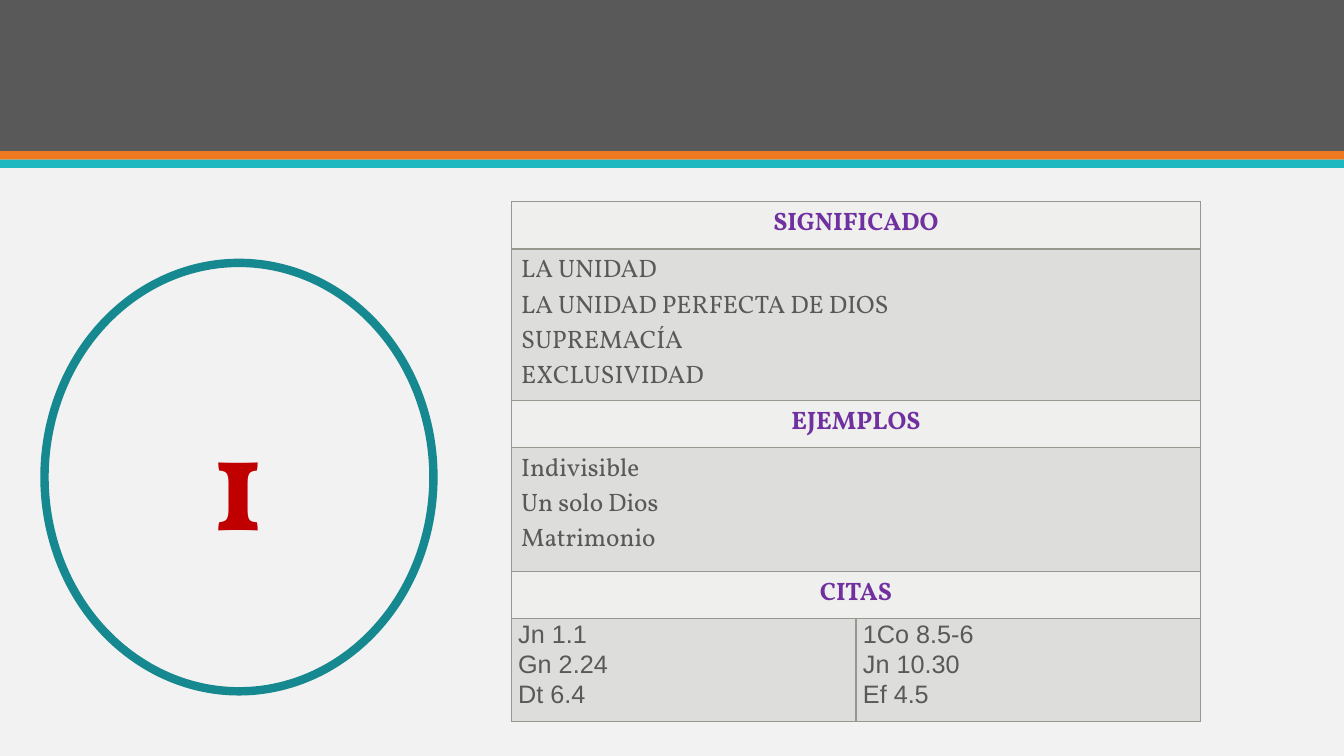
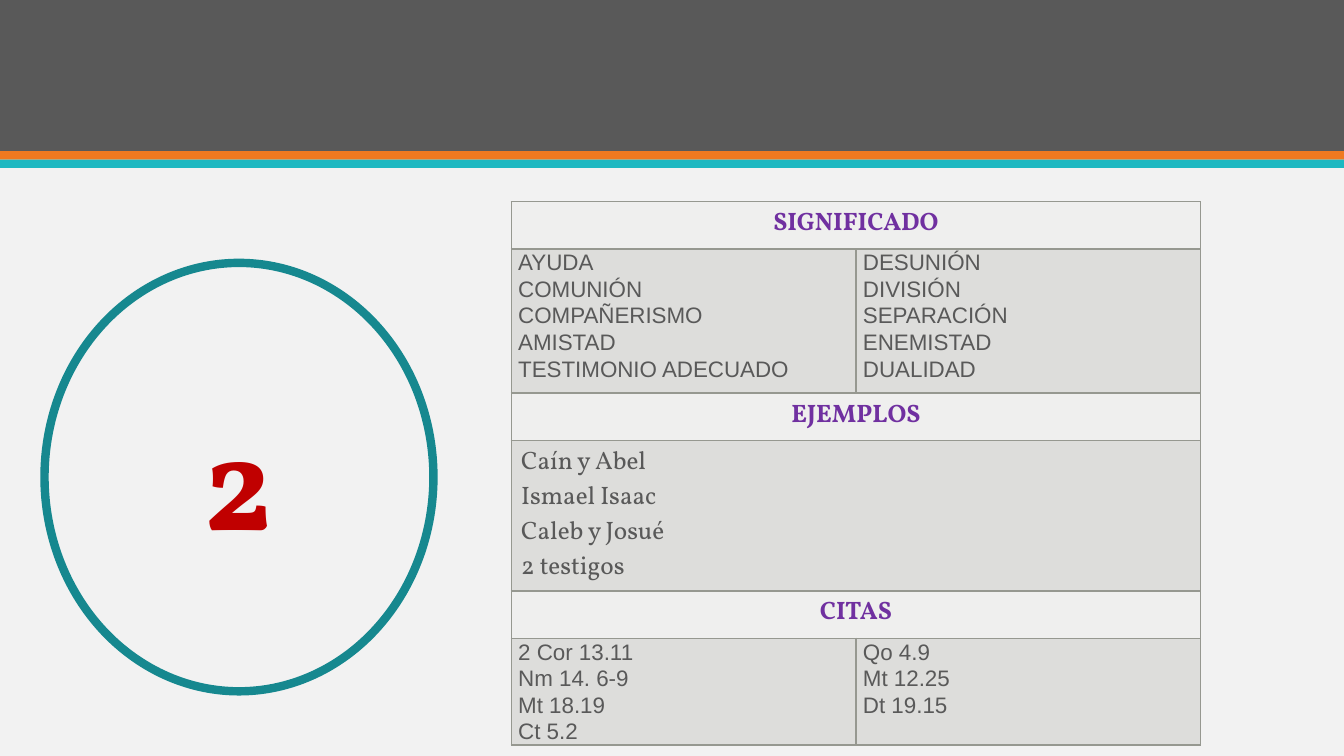
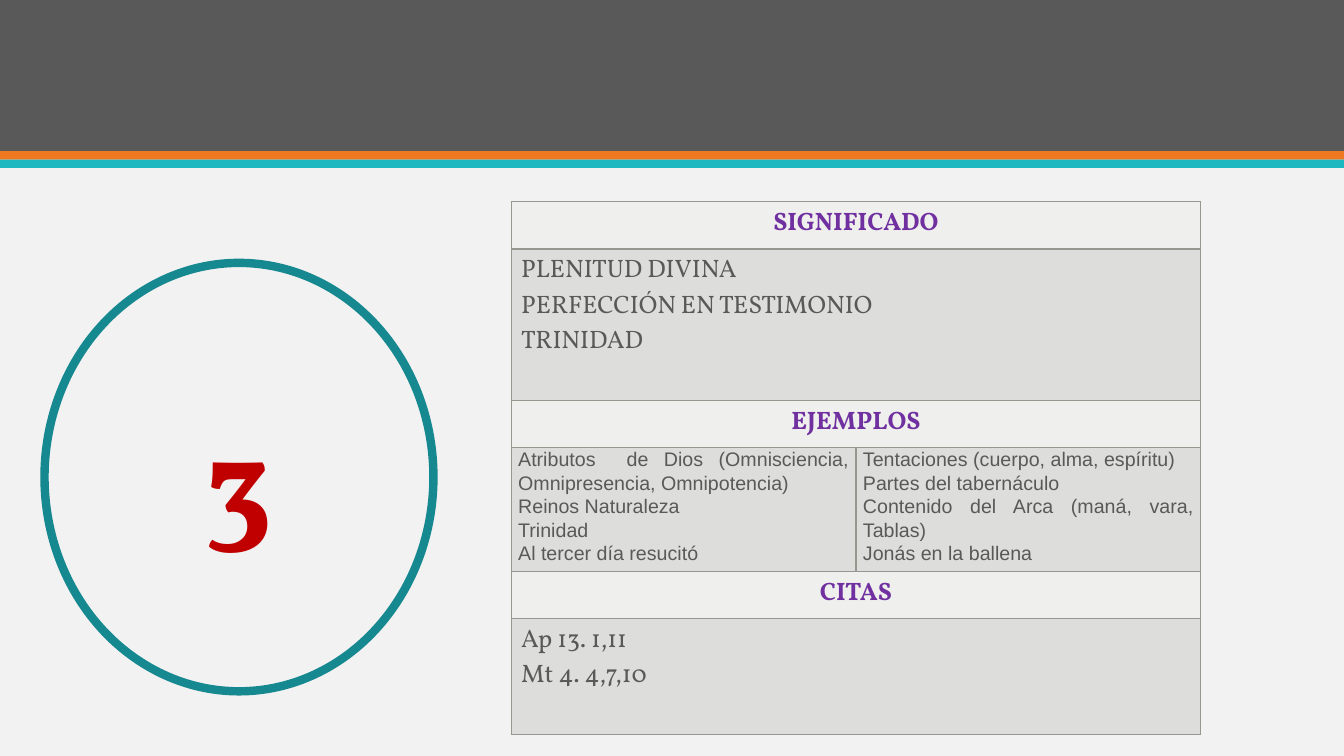
from dataclasses import dataclass

from lxml import etree
from pptx import Presentation
from pptx import util as u
from pptx.dml import color
from pptx.enum import shapes, text
from pptx.oxml import ns

WIDTH, HEIGHT = 13.33, 7.5
GRID_COLUMNS, GRID_ROWS = 160, 90

SERIF, SANS = "Vollkorn", "Arial"
PAPER, GREY, ORANGE, AQUA = "F2F2F2", "595959", "EF7920", "1EB8C1"
TEAL, RED, PURPLE = "16888F", "C00000", "7030A0"
HEADING_FILL, BODY_FILL, BORDER = "EFEFEE", "DDDDDB", "969890"

HEADING_ROWS = 5.64


@dataclass(frozen=True)
class Area:
    """A rectangle in grid columns and rows."""
    left: float
    top: float
    width: float
    height: float

    def place(self):
        return (across(self.left), down(self.top),
                across(self.width), down(self.height))


@dataclass(frozen=True)
class Band:
    area: Area
    fill: str


@dataclass(frozen=True)
class Section:
    """A heading over one full-width list or two side-by-side lists."""
    title: str
    lists: tuple[tuple[str, ...], ...]
    rows: float
    size: int = 18


@dataclass(frozen=True)
class NumberPage:
    number: str
    sections: tuple[Section, ...]


BANDS = (
    Band(Area(0, 0, GRID_COLUMNS, 18), GREY),
    Band(Area(0, 18, GRID_COLUMNS, 1), ORANGE),
    Band(Area(0, 19, GRID_COLUMNS, 1), AQUA),
)
CIRCLE = Area(5.3, 31.3, 46.3, 51)
TABLE_LEFT, TABLE_TOP, TABLE_WIDTH = 60.85, 24, 82.1

PAGES = (
    NumberPage("1", (
        Section("SIGNIFICADO", (("LA UNIDAD", "LA UNIDAD PERFECTA DE DIOS",
                                 "SUPREMACÍA", "EXCLUSIVIDAD"),), 18),
        Section("EJEMPLOS", (("Indivisible", "Un solo Dios", "Matrimonio"),), 14.75),
        Section("CITAS", (("Jn 1.1", "Gn 2.24", "Dt 6.4"),
                          ("1Co 8.5-6", "Jn 10.30", "Ef 4.5")), 12.2),
    )),
    NumberPage("2", (
        Section("SIGNIFICADO", (("AYUDA", "COMUNIÓN", "COMPAÑERISMO", "AMISTAD",
                                 "TESTIMONIO ADECUADO"),
                                ("DESUNIÓN", "DIVISIÓN", "SEPARACIÓN", "ENEMISTAD",
                                 "DUALIDAD")), 17.15, 16),
        Section("EJEMPLOS", (("Caín y Abel", "Ismael Isaac", "Caleb y Josué",
                              "2 testigos"),), 17.9),
        Section("CITAS", (("2 Cor 13.11", "Nm 14. 6-9", "Mt 18.19", "Ct 5.2"),
                          ("Qo 4.9", "Mt 12.25", "Dt 19.15")), 12.7, 16),
    )),
    NumberPage("3", (
        Section("SIGNIFICADO", (("PLENITUD DIVINA", "PERFECCIÓN EN TESTIMONIO",
                                 "TRINIDAD"),), 18),
        Section("EJEMPLOS", (
            ("Atributos  de Dios (Omnisciencia, Omnipresencia, Omnipotencia)",
             "Reinos Naturaleza", "Trinidad", "Al tercer día resucitó"),
            ("Tentaciones (cuerpo, alma, espíritu)", "Partes del tabernáculo",
             "Contenido del Arca (maná, vara, Tablas)", "Jonás en la ballena"),
        ), 14.75, 14),
        Section("CITAS", (("Ap 13. 1,11", "Mt 4. 4,7,10"),), 13.8),
    )),
)


def across(columns: float) -> int:
    return u.Inches(columns * WIDTH / GRID_COLUMNS)


def down(rows: float) -> int:
    return u.Inches(rows * HEIGHT / GRID_ROWS)


def paint(fill, value: str) -> None:
    fill.solid()
    fill.fore_color.rgb = color.RGBColor.from_string(value)


def write(frame, lines, *, font=SERIF, size=18, ink=GREY, bold=False,
          align=None, spacing=None) -> None:
    """Write each line as a paragraph of the frame."""
    for index, line in enumerate(lines):
        para = frame.add_paragraph() if index else frame.paragraphs[0]
        para.alignment = align
        para.line_spacing = spacing
        span = para.add_run()
        span.text = line
        span.font.name = font
        span.font.size = u.Pt(size)
        span.font.bold = bold
        paint(span.font.fill, ink)


def add_outline(cell) -> None:
    """Border all four sides; the lines must precede the cell's fill."""
    properties = cell._tc.get_or_add_tcPr()
    for side in ("lnL", "lnR", "lnT", "lnB"):
        line = etree.SubElement(properties, ns.qn(f"a:{side}"), w=str(u.Pt(1)))
        fill = etree.SubElement(line, ns.qn("a:solidFill"))
        etree.SubElement(fill, ns.qn("a:srgbClr"), val=BORDER)


def add_bands(page) -> None:
    for band in BANDS:
        box = page.shapes.add_shape(shapes.MSO_SHAPE.RECTANGLE, *band.area.place())
        box.shadow.inherit = False
        paint(box.fill, band.fill)
        box.line.fill.background()


def add_circle(page, number: str) -> None:
    circle = page.shapes.add_shape(shapes.MSO_SHAPE.OVAL, *CIRCLE.place())
    circle.shadow.inherit = False
    circle.fill.background()
    paint(circle.line.fill, TEAL)
    circle.line.width = u.Pt(6)
    circle.text_frame.vertical_anchor = text.MSO_ANCHOR.MIDDLE
    write(circle.text_frame, [number], size=96, ink=RED, bold=True,
          align=text.PP_ALIGN.CENTER)


def fill_section(table, first_row: int, section: Section) -> None:
    heading, left = (table.cell(first_row + step, 0) for step in (0, 1))
    right = table.cell(first_row + 1, 1)
    heading.merge(table.cell(first_row, 1))
    write(heading.text_frame, [section.title], ink=PURPLE, bold=True,
          align=text.PP_ALIGN.CENTER)
    if len(section.lists) == 1:
        left.merge(right)
        write(left.text_frame, section.lists[0], size=section.size)
        return
    for cell, lines in zip((left, right), section.lists):
        cell.margin_left = cell.margin_right = u.Inches(0.07)
        cell.margin_top = cell.margin_bottom = 0
        write(cell.text_frame, lines, font=SANS, size=section.size,
              align=text.PP_ALIGN.JUSTIFY, spacing=1.07)


def add_sections(page, sections: tuple[Section, ...]) -> None:
    heights = [rows for section in sections for rows in (HEADING_ROWS, section.rows)]
    area = Area(TABLE_LEFT, TABLE_TOP, TABLE_WIDTH, sum(heights))
    table = page.shapes.add_table(len(heights), 2, *area.place()).table
    table.first_row = table.horz_banding = False
    for index, rows in enumerate(heights):
        table.rows[index].height = down(rows)
        for cell in table.rows[index].cells:
            add_outline(cell)
            paint(cell.fill, BODY_FILL if index % 2 else HEADING_FILL)
    for index, section in enumerate(sections):
        fill_section(table, 2 * index, section)


def main() -> None:
    deck = Presentation()
    deck.slide_width, deck.slide_height = u.Inches(WIDTH), u.Inches(HEIGHT)
    paint(deck.slide_master.background.fill, PAPER)
    blank = deck.slide_layouts[6]
    for content in PAGES:
        page = deck.slides.add_slide(blank)
        add_bands(page)
        add_circle(page, content.number)
        add_sections(page, content.sections)
    deck.save("out.pptx")


if __name__ == "__main__":
    main()
